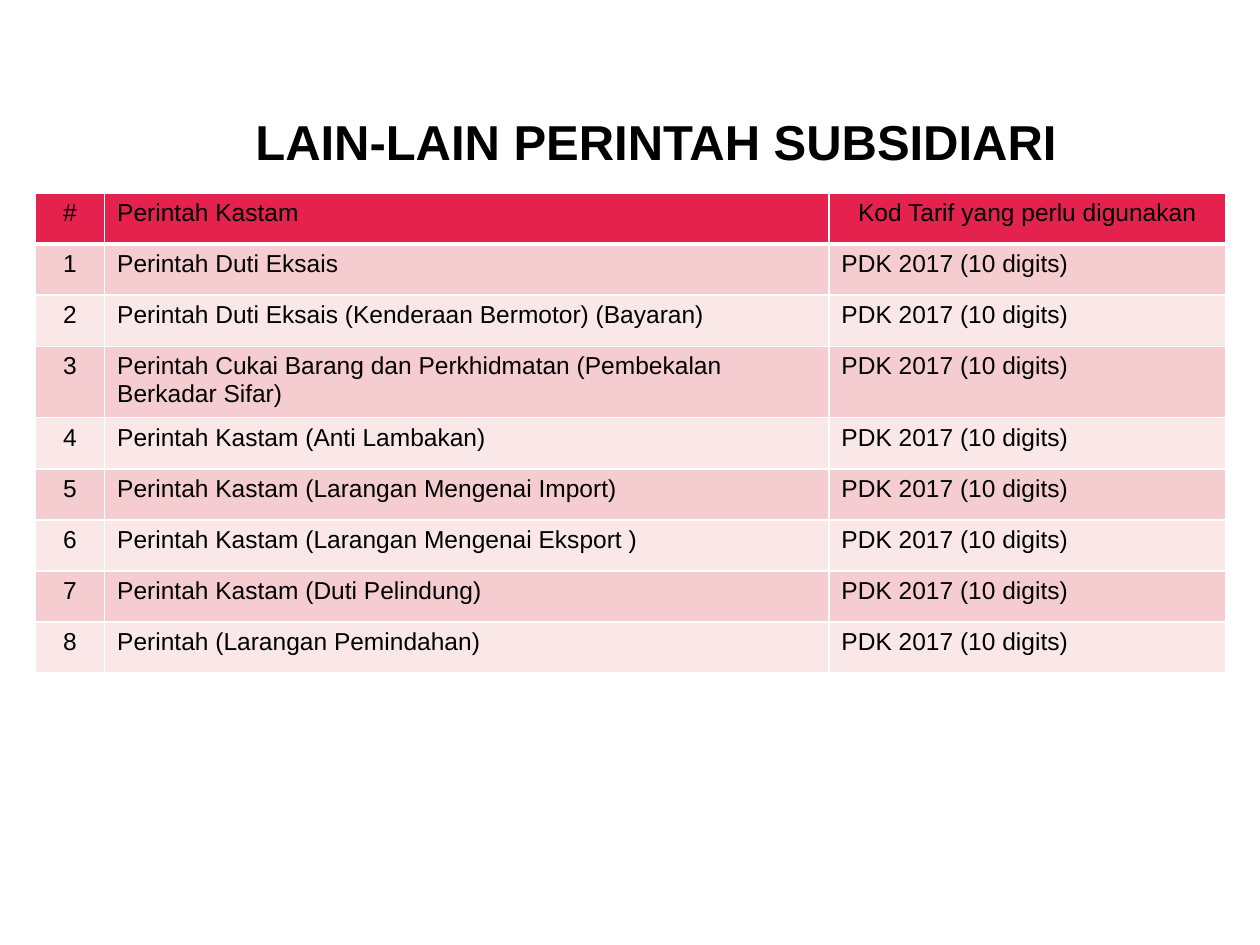
from typing import NamedTuple

from lxml import etree
from pptx import Presentation
from pptx.dml.color import RGBColor
from pptx.enum.text import MSO_AUTO_SIZE, PP_ALIGN
from pptx.oxml.ns import qn
from pptx.util import Cm, Pt

LEFT, CENTER = PP_ALIGN.LEFT, PP_ALIGN.CENTER
FIT_SHAPE = MSO_AUTO_SIZE.SHAPE_TO_FIT_TEXT

FONT = "Arial"
COLORS = {
    "text": "000000",
    "border": "FFFFFF",
    "header": "E5224E",
    "odd": "F5CDD0",
    "even": "FAE8E9",
}


class Column(NamedTuple):
    heading: str
    width: float
    heading_align: PP_ALIGN
    body_align: PP_ALIGN


COLUMNS = [
    Column("#", 1.4, CENTER, CENTER),
    Column("Perintah Kastam", 14.6, LEFT, LEFT),
    Column("Kod Tarif yang perlu digunakan", 8.0, CENTER, LEFT),
]
ROW_HEIGHT = 1.03
TARIFF_CODE = "PDK 2017 (10 digits)"
ORDERS = [
    "Perintah Duti Eksais",
    "Perintah Duti Eksais (Kenderaan Bermotor) (Bayaran)",
    "Perintah Cukai Barang dan Perkhidmatan (Pembekalan Berkadar Sifar)",
    "Perintah Kastam (Anti Lambakan)",
    "Perintah Kastam (Larangan Mengenai Import)",
    "Perintah Kastam (Larangan Mengenai Eksport )",
    "Perintah Kastam (Duti Pelindung)",
    "Perintah (Larangan Pemindahan)",
]


def write_text(text_frame, text: str, *, size: float = 14, bold: bool = False,
               align: PP_ALIGN = LEFT) -> None:
    paragraph = text_frame.paragraphs[0]
    paragraph.alignment = align
    run = paragraph.add_run()
    run.text = text
    run.font.name = FONT
    run.font.size = Pt(size)
    run.font.bold = bold
    run.font.color.rgb = RGBColor.from_string(COLORS["text"])


def set_borders(cell, bottom_width: float) -> None:
    """Draw the four cell edges; they must precede the fill in the XML."""
    properties = cell._tc.get_or_add_tcPr()
    widths = {"a:lnL": 1, "a:lnR": 1, "a:lnT": 1, "a:lnB": bottom_width}
    for position, (tag, width) in enumerate(widths.items()):
        line = etree.Element(qn(tag), w=str(Pt(width)))
        fill = etree.SubElement(line, qn("a:solidFill"))
        etree.SubElement(fill, qn("a:srgbClr"), val=COLORS["border"])
        properties.insert(position, line)


def fill_cell(cell, text: str, color: str, align: PP_ALIGN,
              bottom_width: float = 1) -> None:
    cell.fill.solid()
    cell.fill.fore_color.rgb = RGBColor.from_string(COLORS[color])
    set_borders(cell, bottom_width)
    write_text(cell.text_frame, text, align=align)


def add_title(slide) -> None:
    title = slide.shapes.add_textbox(Cm(4.9), Cm(2.13), Cm(16.84), Cm(1.45))
    title.text_frame.word_wrap = False
    title.text_frame.auto_size = FIT_SHAPE
    write_text(title.text_frame, "LAIN-LAIN PERINTAH SUBSIDIARI", size=28, bold=True)


def add_orders_table(slide) -> None:
    row_count = len(ORDERS) + 1
    table = slide.shapes.add_table(
        row_count, len(COLUMNS), Cm(0.71), Cm(3.89),
        Cm(sum(column.width for column in COLUMNS)), Cm(ROW_HEIGHT * row_count),
    ).table
    for row in table.rows:
        row.height = Cm(ROW_HEIGHT)

    # Header row
    for index, column in enumerate(COLUMNS):
        table.columns[index].width = Cm(column.width)
        fill_cell(table.cell(0, index), column.heading, "header",
                  column.heading_align, bottom_width=3)

    # Numbered orders in alternating bands
    for number, order in enumerate(ORDERS, start=1):
        band = "odd" if number % 2 else "even"
        for index, text in enumerate((str(number), order, TARIFF_CODE)):
            fill_cell(table.cell(number, index), text, band, COLUMNS[index].body_align)


def main() -> None:
    presentation = Presentation()
    presentation.slide_width, presentation.slide_height = Cm(25.4), Cm(19.05)
    slide = presentation.slides.add_slide(presentation.slide_layouts[6])
    add_title(slide)
    add_orders_table(slide)
    presentation.save("out.pptx")


if __name__ == "__main__":
    main()
